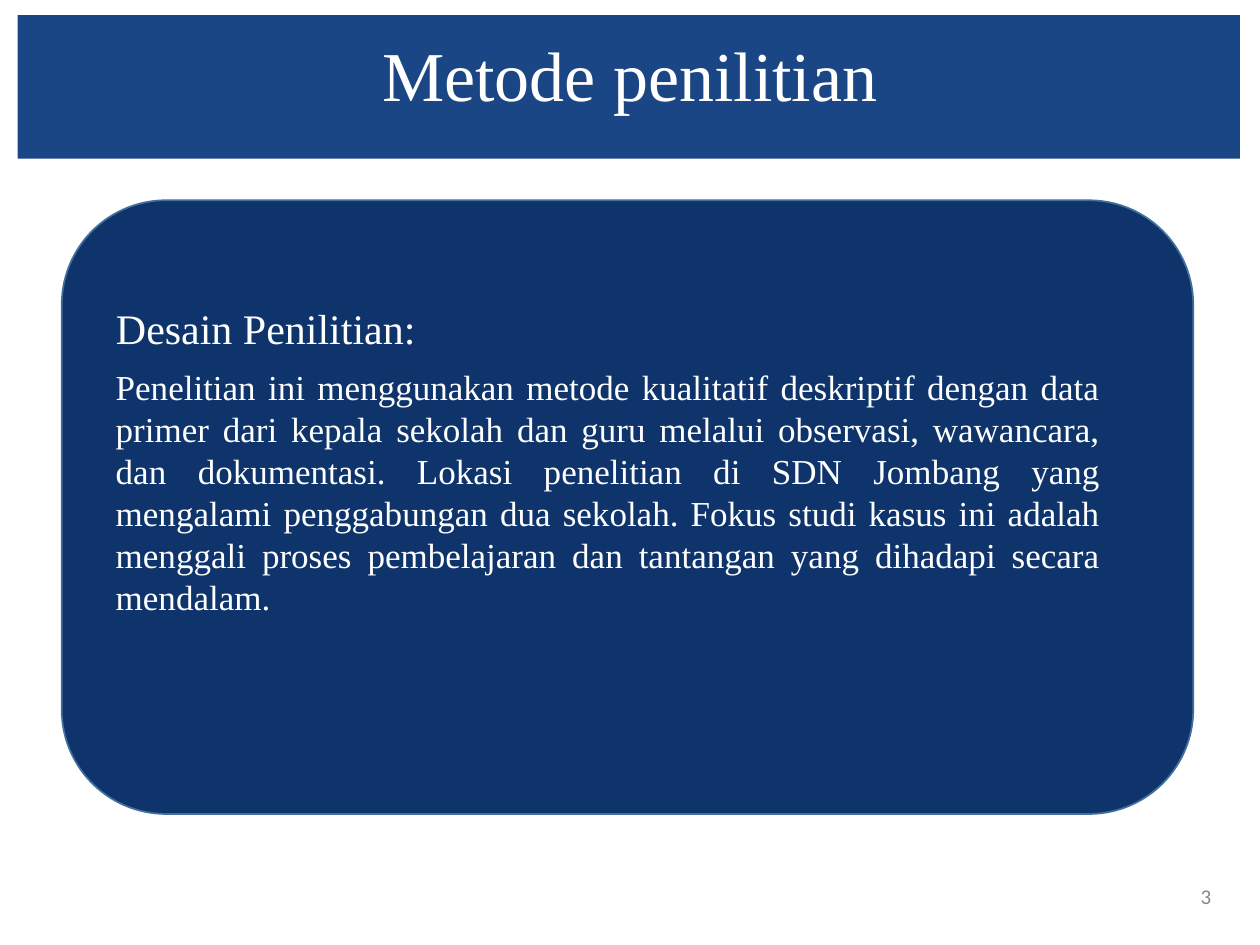
from pptx import Presentation
from pptx.dml.color import RGBColor
from pptx.enum.shapes import MSO_SHAPE
from pptx.enum.text import PP_ALIGN
from pptx.util import Inches, Pt

BANNER_BLUE = RGBColor(0x1B, 0x46, 0x85)
PANEL_BLUE = RGBColor(0x0E, 0x34, 0x6B)
OUTLINE_BLUE = RGBColor(0x41, 0x70, 0x9C)
WHITE = RGBColor(0xFF, 0xFF, 0xFF)
GREY = RGBColor(0x88, 0x88, 0x88)
SERIF = "Times New Roman"

prs = Presentation()
prs.slide_width, prs.slide_height = Inches(10), Inches(7.5)
slide = prs.slides.add_slide(prs.slide_layouts[6])

# Grid of 100 columns by 75 rows
COL = prs.slide_width / 100
ROW = prs.slide_height / 75


def grid(left, top, width, height):
    return int(left * COL), int(top * ROW), int(width * COL), int(height * ROW)


def add_text(area, text, size, font, color, align, margins=(0, 0, 0, 0)):
    frame = slide.shapes.add_textbox(*grid(*area)).text_frame
    frame.word_wrap = True
    (frame.margin_left, frame.margin_top,
     frame.margin_right, frame.margin_bottom) = [Inches(m) for m in margins]
    paragraph = frame.paragraphs[0]
    paragraph.text = text
    paragraph.alignment = align
    paragraph.font.size = Pt(size)
    paragraph.font.name = font
    paragraph.font.color.rgb = color
    return paragraph


# Title banner
banner = slide.shapes.add_shape(MSO_SHAPE.RECTANGLE, *grid(1.4, 1.2, 97, 11.4))
banner.shadow.inherit = False
banner.fill.solid()
banner.fill.fore_color.rgb = BANNER_BLUE
banner.line.fill.background()
add_text((8.2, 1.8, 83.6, 7.4), "Metode penilitian", 40, SERIF, WHITE,
         PP_ALIGN.CENTER, (0, 0.07, 0, 0))

# Rounded panel
panel = slide.shapes.add_shape(MSO_SHAPE.ROUNDED_RECTANGLE,
                               *grid(4.9, 15.9, 89.8, 48.7))
panel.adjustments[0] = 0.17
panel.shadow.inherit = False
panel.fill.solid()
panel.fill.fore_color.rgb = PANEL_BLUE
panel.line.color.rgb = OUTLINE_BLUE
panel.line.width = Pt(1)

# Research design: heading and description
heading = add_text((9.2, 21.9, 81.5, 5.5), "Desain Penilitian:", 24, SERIF,
                   WHITE, PP_ALIGN.JUSTIFY, (0, 0.01, 0, 0))
heading.line_spacing = 1.5
add_text((8.2, 28.5, 80.1, 21.2),
         "Penelitian ini menggunakan metode kualitatif deskriptif dengan data "
         "primer dari kepala sekolah dan guru melalui observasi, wawancara, "
         "dan dokumentasi. Lokasi penelitian di SDN Jombang yang mengalami "
         "penggabungan dua sekolah. Fokus studi kasus ini adalah menggali "
         "proses pembelajaran dan tantangan yang dihadapi secara mendalam.",
         20, SERIF, WHITE, PP_ALIGN.JUSTIFY, (0.1, 0.05, 0.1, 0.05))

# Slide number
number = add_text((95.3, 70.4, 2.4, 1.9), "3", 12, "Calibri", GREY,
                  PP_ALIGN.LEFT)
number.line_spacing = Pt(12.4)

prs.save("out.pptx")
